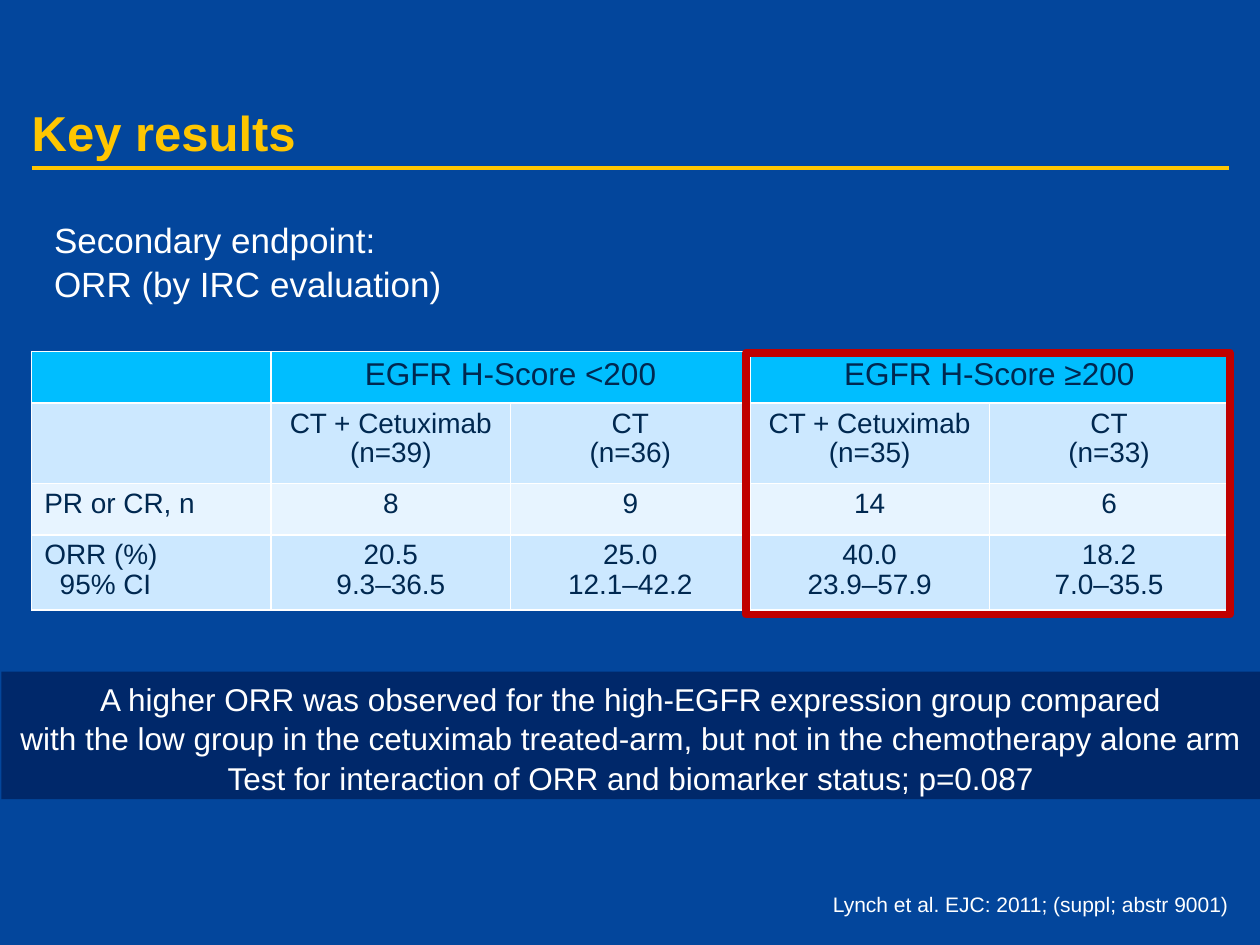
from lxml.etree import SubElement
from pptx import Presentation
from pptx.dml.color import RGBColor
from pptx.enum.shapes import MSO_CONNECTOR, MSO_SHAPE
from pptx.enum.text import MSO_ANCHOR, PP_ALIGN
from pptx.oxml.ns import qn
from pptx.util import Cm, Pt

GOLD, WHITE, INK, RED = "FFC600", "FFFFFF", "002850", "C00000"
NAVY, BLUE, CYAN = "00286A", "03469C", "00BEFF"
PALE, LIGHT = "CCE8FF", "E7F4FF"
LEFT, WIDE = 0.64, 24.13

ROWS = [
    ("", "EGFR H-Score <200", "", "EGFR H-Score ≥200", ""),
    ("", "CT + Cetuximab\v(n=39)", "CT\v(n=36)",
     "CT + Cetuximab\v(n=35)", "CT\v(n=33)"),
    ("PR or CR, n", "8", "9", "14", "6"),
    ("ORR (%)\n95% CI", "20.5\n9.3–36.5", "25.0\v12.1–42.2",
     "40.0\n23.9–57.9", "18.2\n7.0–35.5"),
]
HIGHS = (1.03, 1.63, 1.03, 1.52)
FILLS = (CYAN, PALE, LIGHT, PALE)
SIZES = (18, 16, 16, 16)


def color(code):
    """Turn a hex string into a colour."""
    return RGBColor.from_string(code)


def paint(item, code):
    """Give a shape, cell or background a solid fill."""
    item.fill.solid()
    item.fill.fore_color.rgb = color(code)


def write(frame, text, size, code=WHITE, align=PP_ALIGN.LEFT, space=1.05, bold=False):
    """Fill a text frame, one paragraph per line."""
    frame.text = text
    for para in frame.paragraphs:
        para.alignment = align
        para.line_spacing = space
        font = para.font
        font.name, font.size, font.bold = "Arial", Pt(size), bold
        font.color.rgb = color(code)


def pad(frame, top=0):
    """Clear the margins of a text frame and anchor it at the bottom."""
    frame.margin_left = frame.margin_right = frame.margin_bottom = 0
    frame.margin_top = Cm(top)
    frame.vertical_anchor = MSO_ANCHOR.BOTTOM


def add_title(slide, text):
    """Place the title and the gold rule below it."""
    title = slide.shapes.title
    title.left, title.top = Cm(LEFT), Cm(LEFT)
    title.width, title.height = Cm(WIDE), Cm(2.62)
    write(title.text_frame, text, 28, GOLD, space=1, bold=True)
    pad(title.text_frame, 0.13)
    rule = slide.shapes.add_connector(
        MSO_CONNECTOR.STRAIGHT, Cm(LEFT), Cm(3.38), Cm(LEFT + WIDE), Cm(3.38))
    rule.line.color.rgb = color(GOLD)
    rule.line.width = Pt(2.25)
    SubElement(rule.element.spPr, qn("a:effectLst"))


def add_text(slide, box, text, size, align=PP_ALIGN.LEFT, wrap=True):
    """Add a text box and return its frame."""
    frame = slide.shapes.add_textbox(*map(Cm, box)).text_frame
    frame.word_wrap = wrap
    write(frame, text, size, align=align)
    return frame


def add_rect(slide, box):
    """Add a rectangle without fill, line or shadow."""
    rect = slide.shapes.add_shape(MSO_SHAPE.RECTANGLE, *map(Cm, box))
    rect.shadow.inherit = False
    rect.fill.background()
    rect.line.fill.background()
    return rect


def edge(cell):
    """Draw thin white borders around a cell."""
    props = cell._tc.get_or_add_tcPr()
    for spot, side in enumerate(("lnL", "lnR", "lnT", "lnB")):
        line = props.makeelement(qn(f"a:{side}"), {"w": str(Pt(1))})
        fill = SubElement(line, qn("a:solidFill"))
        SubElement(fill, qn("a:srgbClr"), val=WHITE)
        props.insert(spot, line)


def add_grid(slide):
    """Add the response table."""
    grid = slide.shapes.add_table(
        len(ROWS), len(ROWS[0]), Cm(LEFT), Cm(7.09), Cm(WIDE), Cm(sum(HIGHS))).table
    grid.first_row = grid.horz_banding = False
    for row, texts in enumerate(ROWS):
        grid.rows[row].height = Cm(HIGHS[row])
        for col, text in enumerate(texts):
            cell = grid.cell(row, col)
            align = PP_ALIGN.CENTER if col else PP_ALIGN.LEFT
            write(cell.text_frame, text, SIZES[row], INK, align, 0.96)
            paint(cell, FILLS[row])
            edge(cell)
    for col in (1, 3):
        grid.cell(0, col).merge(grid.cell(0, col + 1))
    last = grid.cell(3, 0).text_frame.paragraphs[1]
    last._p.get_or_add_pPr().set("marL", str(Cm(0.31)))


def main():
    """Build the slide and save it."""
    deck = Presentation()
    deck.slide_width, deck.slide_height = Cm(25.4), Cm(19.05)
    slide = deck.slides.add_slide(deck.slide_layouts[5])
    paint(slide.background, BLUE)
    add_title(slide, "Key results")
    add_grid(slide)
    banner = add_rect(slide, (0.03, 13.54, 25.37, 2.57))
    paint(banner, NAVY)
    frame = banner.text_frame
    frame.word_wrap = False
    frame.vertical_anchor = MSO_ANCHOR.TOP
    write(frame, "A higher ORR was observed for the high-EGFR expression group compared\n"
          "with the low group in the cetuximab treated-arm, "
          "but not in the chemotherapy alone arm\n"
          "Test for interaction of ORR and biomarker status; p=0.087",
          18, align=PP_ALIGN.CENTER)
    pad(add_text(slide, (16.74, 17.98, 8.03, 0.51),
                 "Lynch et al. EJC: 2011; (suppl; abstr 9001)", 12, PP_ALIGN.RIGHT, False))
    add_text(slide, (0.84, 4.24, 22.86, 1.96),
             "Secondary endpoint:\vORR (by IRC evaluation)", 20)
    mark = add_rect(slide, (15.04, 7.11, 9.75, 5.28))
    mark.line.color.rgb = color(RED)
    mark.line.width = Pt(4.5)
    deck.save("out.pptx")


if __name__ == "__main__":
    main()
